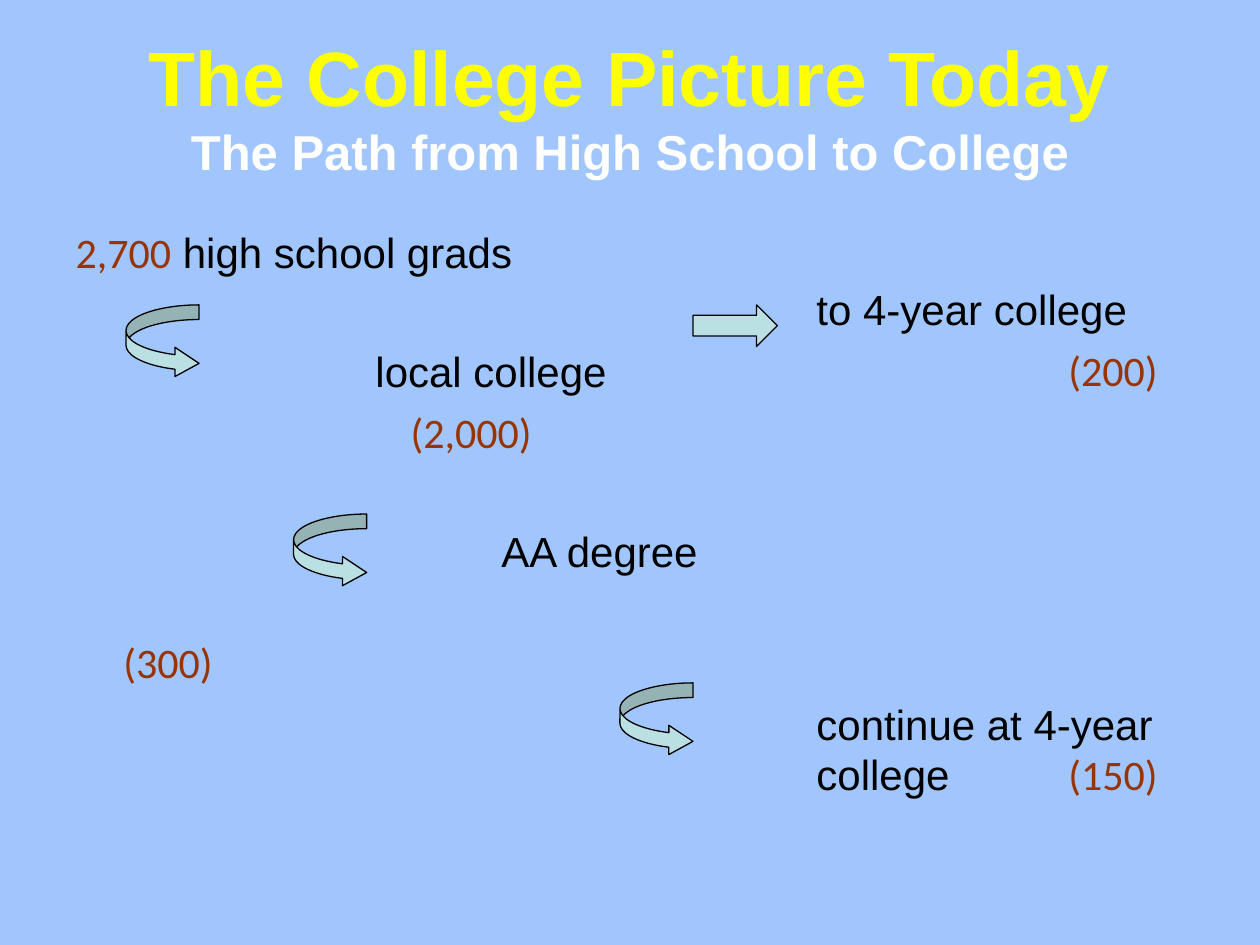
from dataclasses import dataclass

from pptx import Presentation
from pptx.dml.color import RGBColor
from pptx.enum import shapes, text
from pptx.util import Inches, Pt


@dataclass(frozen=True)
class Theme:
    background: str = "A1C6FD"
    title: str = "FFFF00"
    subtitle: str = "FFFFFF"
    body: str = "000000"
    figure: str = "993300"
    arrow: str = "BBE0E3"
    outline: str = "000000"
    text_font: str = "Arial"
    figure_font: str = "Calibri"
    title_size: int = 44
    subtitle_size: int = 28
    body_size: int = 24


THEME = Theme()
CURVED = shapes.MSO_SHAPE.CURVED_RIGHT_ARROW
STRAIGHT = shapes.MSO_SHAPE.RIGHT_ARROW


def place(shape, box):
    shape.left, shape.top, shape.width, shape.height = map(Inches, box)


def style(font, name, size, color):
    font.name, font.size = name, Pt(size)
    font.color.rgb = RGBColor.from_string(color)


def add_title(slide, box, title, subtitle):
    shape = slide.shapes.title
    place(shape, box)
    frame = shape.text_frame
    frame.auto_size = text.MSO_AUTO_SIZE.NONE
    frame.vertical_anchor = text.MSO_ANCHOR.MIDDLE
    paragraph = frame.paragraphs[0]
    paragraph.alignment = text.PP_ALIGN.CENTER
    paragraph.font.bold = True
    heading = paragraph.add_run()
    heading.text = title
    style(heading.font, THEME.text_font, THEME.title_size, THEME.title)
    paragraph.add_line_break()
    subheading = paragraph.add_run()
    subheading.text = subtitle
    style(subheading.font, THEME.text_font, THEME.subtitle_size, THEME.subtitle)


def add_steps(placeholder, box, steps, top_margin=0.05):
    """Fill a list with (indent in inches, hanging in inches, space before in points, words, figure).

    A figure that precedes its words is given as the first of the two.
    """
    place(placeholder, box)
    frame = placeholder.text_frame
    frame.auto_size = text.MSO_AUTO_SIZE.NONE
    frame.vertical_anchor = text.MSO_ANCHOR.TOP
    frame.margin_top = Inches(top_margin)
    for index, (indent, hanging, space, *parts) in enumerate(steps):
        paragraph = frame.add_paragraph() if index else frame.paragraphs[0]
        paragraph.space_before = Pt(space)
        properties = paragraph._p.get_or_add_pPr()
        properties.set("marL", str(Inches(indent)))
        properties.set("indent", str(-Inches(hanging)))
        properties.set("defTabSz", str(Inches(1)))
        properties.get_or_add_defRPr().addprevious(
            properties.makeelement("{http://schemas.openxmlformats.org/drawingml/2006/main}buNone", {}))
        for part in parts:
            run = paragraph.add_run()
            run.text = part
            is_figure = part.strip("(),0123456789") == ""
            style(run.font, THEME.figure_font if is_figure else THEME.text_font,
                  THEME.body_size, THEME.figure if is_figure else THEME.body)


def add_arrow(slide, kind, box, adjustments):
    arrow = slide.shapes.add_shape(kind, *map(Inches, box))
    for index, value in enumerate(adjustments):
        arrow.adjustments[index] = value
    arrow.shadow.inherit = False
    arrow.fill.solid()
    arrow.fill.fore_color.rgb = RGBColor.from_string(THEME.arrow)
    arrow.line.color.rgb = RGBColor.from_string(THEME.outline)
    arrow.line.width = Pt(0.75)


def main():
    presentation = Presentation()
    presentation.slide_width, presentation.slide_height = Inches(10), Inches(7.5)
    slide = presentation.slides.add_slide(presentation.slide_layouts[3])
    slide.background.fill.solid()
    slide.background.fill.fore_color.rgb = RGBColor.from_string(THEME.background)

    add_title(slide, (0.5, 0.17, 9, 1.33),
              "The College Picture Today", "The Path from High School to College")
    add_steps(slide.placeholders[1], (0.5, 1.75, 5.17, 4.95), [
        (0.38, 0.38, 0, "2,700", " high school grads"),
        (2.38, 0, 39, "local college"),
        (2.66, 0, 6, "(2,000)"),
        (3.38, 0, 39, "AA degree"),
        (0.38, 0, 35, "(300)"),
    ])
    add_steps(slide.placeholders[2], (6, 1.75, 3.83, 5), [
        (0.38, 0, 0, "to 4-year college"),
        (2.38, 0, 6, "(200)"),
        (0.38, 0, 173.5, "continue at 4-year college\t", "(150)"),
    ], top_margin=0.5)

    for left, top in ((1, 2.42), (2.33, 4.08), (4.92, 5.42)):
        add_arrow(slide, CURVED, (left, top, 0.58, 0.58), (0.2, 0.4, 0.33))
    add_arrow(slide, STRAIGHT, (5.5, 2.42, 0.67, 0.33), (0.5, 0.5))
    presentation.save("out.pptx")


if __name__ == "__main__":
    main()
